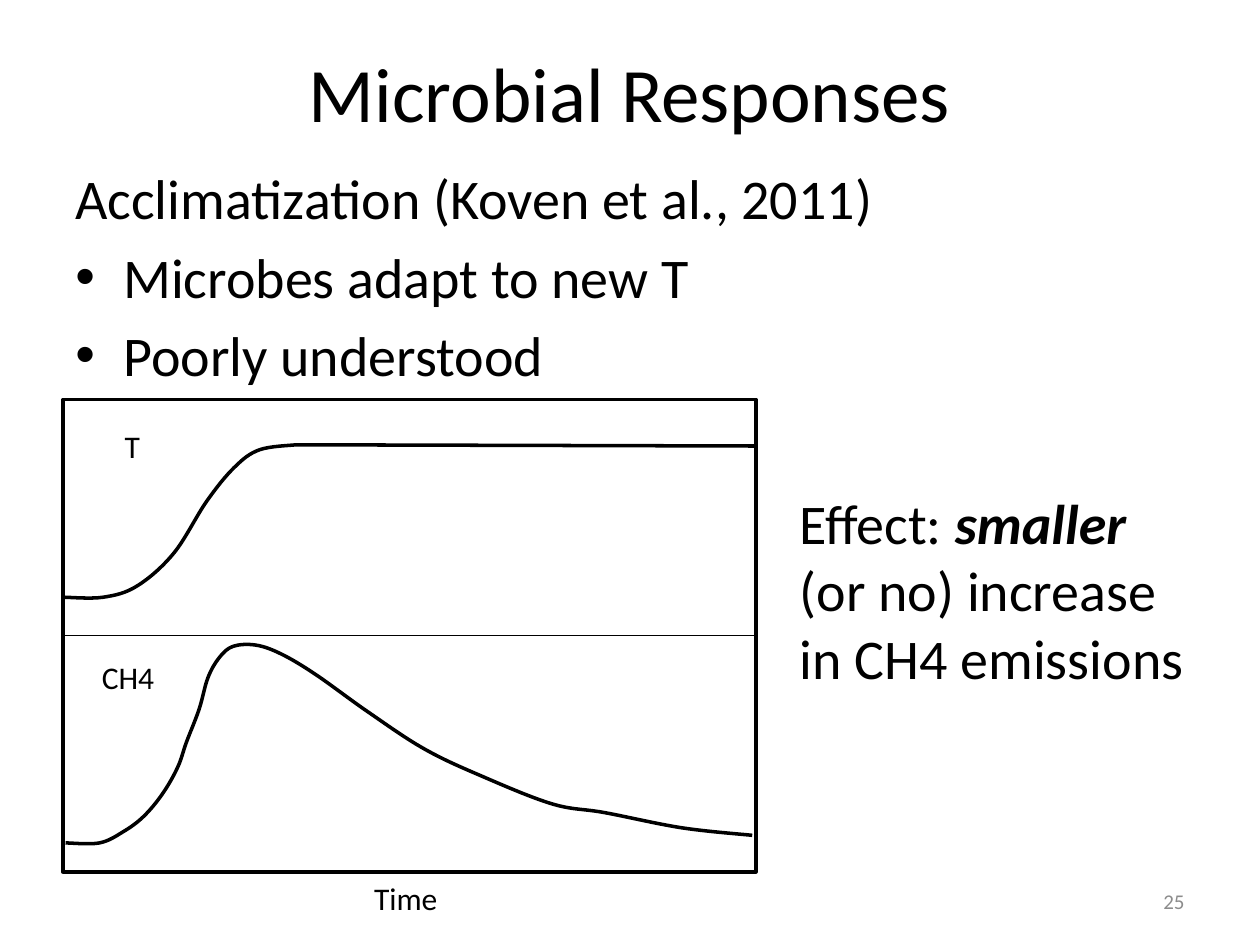
import pptx
import pptx.dml.color
import pptx.enum.shapes
import pptx.enum.text
import pptx.oxml.ns
import pptx.util
from lxml import etree

Inches = pptx.util.Inches
Pt = pptx.util.Pt
ALIGN = pptx.enum.text.PP_ALIGN
ANCHOR = pptx.enum.text.MSO_ANCHOR
qn = pptx.oxml.ns.qn

COLORS = {"ink": "000000", "gray": "8C8C8C"}
FONT = "Calibri"

WARM = [(0.5, 4.74), (0.82, 4.74), (1.09, 4.65), (1.38, 4.39), (1.64, 3.98),
        (1.86, 3.71), (2.06, 3.57), (2.35, 3.53)]
PLATEAU = (6, 3.54)
METHANE = [(0.52, 6.69), (0.79, 6.69), (0.98, 6.6), (1.14, 6.48), (1.29, 6.3),
           (1.41, 6.09), (1.48, 5.89), (1.58, 5.63), (1.65, 5.38), (1.74, 5.22),
           (1.85, 5.13), (2.03, 5.12), (2.23, 5.19), (2.5, 5.35), (2.92, 5.65),
           (3.36, 5.94), (3.8, 6.15), (4.38, 6.38), (4.8, 6.45), (5.41, 6.57),
           (5.97, 6.63)]


def color(name):
    return pptx.dml.color.RGBColor.from_string(COLORS[name])


def style(para, size, tone="ink"):
    for run in para.runs:
        run.font.name = FONT
        run.font.size = Pt(size)
        run.font.color.rgb = color(tone)


def add_text(slide, box, text, size, tone="ink", align=ALIGN.LEFT,
             anchor=ANCHOR.TOP, wrap=True):
    frame = slide.shapes.add_textbox(*map(Inches, box)).text_frame
    frame.word_wrap = wrap
    frame.vertical_anchor = anchor
    frame.text = text
    for para in frame.paragraphs:
        para.alignment = align
        style(para, size, tone)
    return frame


def add_bullet(para):
    props = para._p.get_or_add_pPr()
    props.set("marL", str(Inches(0.38)))
    props.set("indent", str(-Inches(0.38)))
    etree.SubElement(props, qn("a:buFont")).set("typeface", "Arial")
    etree.SubElement(props, qn("a:buChar")).set("char", "•")


def add_body(slide):
    lines = ["Acclimatization (Koven et al., 2011)", "Microbes adapt to new T",
             "Poorly understood"]
    frame = add_text(slide, (0.5, 1.25, 9, 2), "\n".join(lines), 32)
    for para in frame.paragraphs:
        para.space_before = Pt(6.4)
    for para in frame.paragraphs[1:]:
        add_bullet(para)


def add_effect(slide):
    frame = add_text(slide, (6.25, 3.83, 3.33, 2.26), "Effect: ", 32)
    para = frame.paragraphs[0]
    word = para.add_run()
    word.text = "smaller"
    word.font.bold = word.font.italic = True
    para.add_run().text = " (or no) increase in CH4 emissions"
    style(para, 32)


def outline(shape, width):
    shape.line.color.rgb = color("ink")
    shape.line.width = Pt(width)


def add_frame(slide):
    shapes = slide.shapes
    rect = shapes.add_shape(pptx.enum.shapes.MSO_SHAPE.RECTANGLE,
                            *map(Inches, (0.5, 3.17, 5.5, 3.75)))
    rect.shadow.inherit = False
    rect.fill.background()
    outline(rect, 2)
    split = shapes.add_connector(pptx.enum.shapes.MSO_CONNECTOR.STRAIGHT,
                                 *map(Inches, (0.5, 5.05, 6, 5.05)))
    split.begin_connect(rect, 1)
    split.end_connect(rect, 3)
    outline(split, 0.75)
    etree.SubElement(split._element.spPr, qn("a:effectLst"))


def bend(curve, count):
    marks = list(curve._element.iter(qn("a:pt")))[:count]
    spots = [(int(mark.get("x")), int(mark.get("y"))) for mark in marks]
    ends = [spots[0], *spots, spots[-1]]
    groups = zip(ends, ends[1:], ends[2:], ends[3:])
    for mark, (a, b, c, d) in zip(marks[1:], groups):
        step = mark.getparent()
        arc = etree.Element(qn("a:cubicBezTo"))
        first = [q + (r - p) // 6 for p, q, r in zip(a, b, c)]
        second = [q - (r - p) // 6 for p, q, r in zip(b, c, d)]
        for x, y in (first, second, c):
            etree.SubElement(arc, qn("a:pt"), x=str(x), y=str(y))
        step.getparent().replace(step, arc)


def add_curve(slide, knots, tail=()):
    spots = [(Inches(x), Inches(y)) for x, y in [*knots, *tail]]
    pen = slide.shapes.build_freeform(*spots[0], scale=1.0)
    pen.add_line_segments(spots[1:], close=False)
    curve = pen.convert_to_shape()
    bend(curve, len(knots))
    curve.shadow.inherit = False
    curve.fill.background()
    outline(curve, 2)


def main():
    deck = pptx.Presentation()
    deck.slide_width, deck.slide_height = Inches(10), Inches(7.5)
    slide = deck.slides.add_slide(deck.slide_layouts[6])
    add_text(slide, (0.5, 0.25, 9, 0.95), "Microbial Responses", 44,
             align=ALIGN.CENTER, anchor=ANCHOR.MIDDLE)
    add_body(slide)
    add_text(slide, (7.17, 6.95, 2.33, 0.4), "25", 12, "gray",
             ALIGN.RIGHT, ANCHOR.MIDDLE)
    add_frame(slide)
    add_curve(slide, WARM, [PLATEAU])
    add_curve(slide, METHANE)
    for text, box in (("CH4", (0.71, 5.17, 0.71, 0.4)),
                      ("Time", (2.87, 6.93, 0.75, 0.4)),
                      ("T", (0.89, 3.34, 0.36, 0.4))):
        add_text(slide, box, text, 18, wrap=False)
    add_effect(slide)
    deck.save("out.pptx")


if __name__ == "__main__":
    main()
